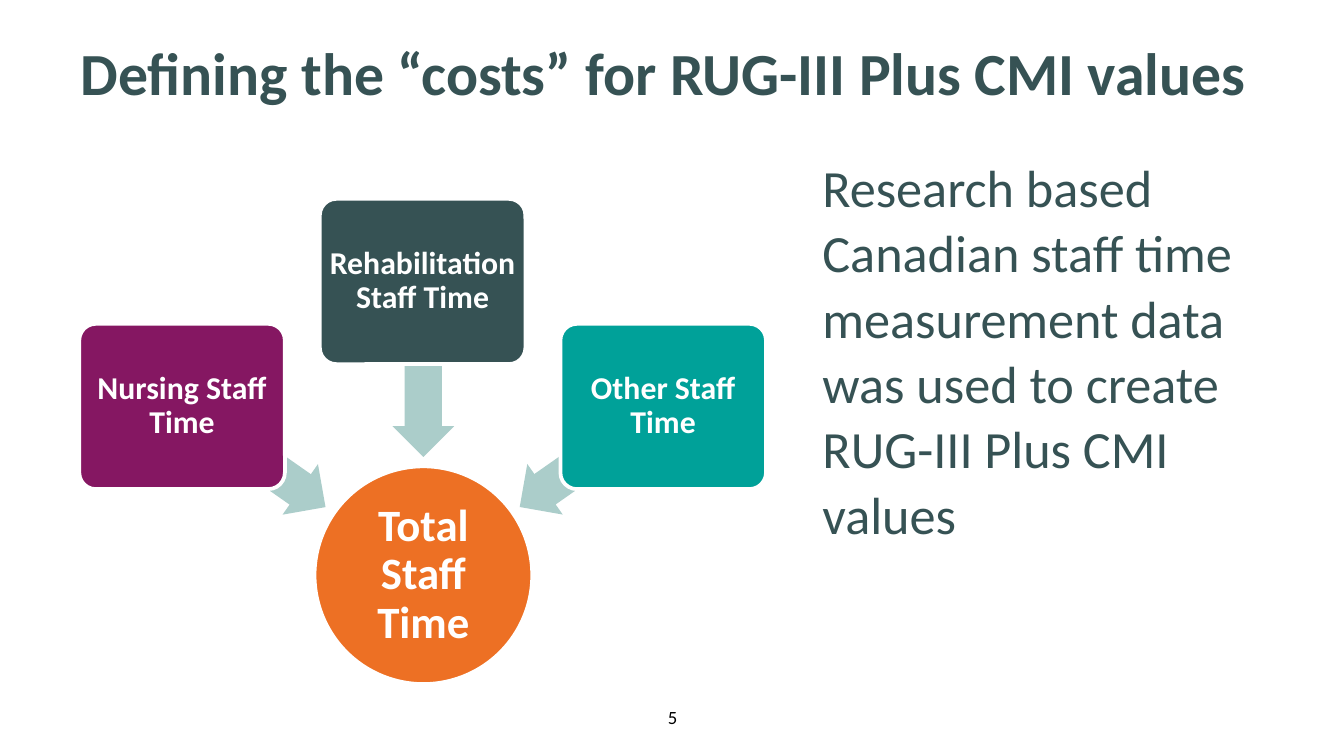
from pptx import Presentation
from pptx.dml.color import RGBColor
from pptx.enum.shapes import MSO_SHAPE
from pptx.enum.text import MSO_ANCHOR, PP_ALIGN
from pptx.util import Inches, Pt

SLATE = RGBColor(0x36, 0x52, 0x54)
PLUM = RGBColor(0x85, 0x17, 0x62)
TEAL = RGBColor(0x00, 0xA1, 0x99)
ORANGE = RGBColor(0xED, 0x70, 0x24)
PALE = RGBColor(0xAB, 0xCD, 0xCA)
WHITE = RGBColor(0xFF, 0xFF, 0xFF)
BLACK = RGBColor(0x00, 0x00, 0x00)


def set_text(sp, text, size, color, bold=False, align=PP_ALIGN.LEFT,
             anchor=MSO_ANCHOR.MIDDLE, spacing=None, inset=0, left=None):
    tf = sp.text_frame
    tf.word_wrap = True
    tf.vertical_anchor = anchor
    tf.margin_left = Inches(inset if left is None else left)
    tf.margin_right = tf.margin_top = tf.margin_bottom = Inches(inset)
    p = tf.paragraphs[0]
    p.alignment = align
    p.line_spacing = spacing
    r = p.add_run()
    r.text = text
    r.font.name = "Calibri"
    r.font.size = Pt(size)
    r.font.bold = bold
    r.font.color.rgb = color


def add_block(kind, x, y, w, h, fill, outlined=True):
    sp = s.shapes.add_shape(kind, Inches(x), Inches(y), Inches(w), Inches(h))
    sp.shadow.inherit = False
    sp.fill.solid()
    sp.fill.fore_color.rgb = fill
    if outlined:
        sp.line.color.rgb = WHITE
        sp.line.width = Pt(2)
    else:
        sp.line.fill.background()
    return sp


# Widescreen 16:9 slide
prs = Presentation()
prs.slide_width = Inches(10)
prs.slide_height = Inches(10 * 9 / 16)
s = prs.slides.add_slide(prs.slide_layouts[6])

# Title, side text and page number
sp = s.shapes.add_textbox(Inches(0.5), Inches(0.29), Inches(9.3), Inches(0.93))
set_text(sp, "Defining the “costs” for RUG-III Plus CMI values", 32, SLATE, bold=True,
         anchor=MSO_ANCHOR.TOP, spacing=Pt(33), inset=0.05, left=0.1)

sp = s.shapes.add_textbox(Inches(5.87), Inches(1.13), Inches(3.54), Inches(2.93))
set_text(sp, "Research based Canadian staff time measurement data was used to create "
         "RUG-III Plus CMI values", 28, SLATE, spacing=Pt(35), left=0.25)

sp = s.shapes.add_textbox(Inches(4.69), Inches(5.25), Inches(0.63), Inches(0.17))
set_text(sp, "5", 10, BLACK, align=PP_ALIGN.CENTER)

# Total circle
sp = add_block(MSO_SHAPE.OVAL, 2.34, 3.47, 1.62, 1.62, ORANGE)
set_text(sp, "Total Staff Time", 24, WHITE, bold=True, align=PP_ALIGN.CENTER,
         spacing=0.9, inset=0.02)

# Staff time boxes, each over its arrow to the circle
parts = [
    ("Nursing Staff Time", PLUM, 0.59, 2.41, 1.24, 3.17, 215),
    ("Rehabilitation Staff Time", SLATE, 2.38, 1.48, 2.5, 2.52, 270),
    ("Other Staff Time", TEAL, 4.17, 2.41, 3.75, 3.17, 325),
]
for label, color, box_x, box_y, arrow_x, arrow_y, angle in parts:
    sp = add_block(MSO_SHAPE.LEFT_ARROW, arrow_x, arrow_y, 1.3, 0.46, PALE, outlined=False)
    sp.adjustments[0] = 0.6
    sp.adjustments[1] = 0.5
    sp.rotation = angle

    sp = add_block(MSO_SHAPE.ROUNDED_RECTANGLE, box_x, box_y, 1.53, 1.23, color)
    sp.adjustments[0] = 0.1
    set_text(sp, label, 17, WHITE, bold=True, align=PP_ALIGN.CENTER,
             spacing=0.9, inset=0.02)

prs.save("out.pptx")
